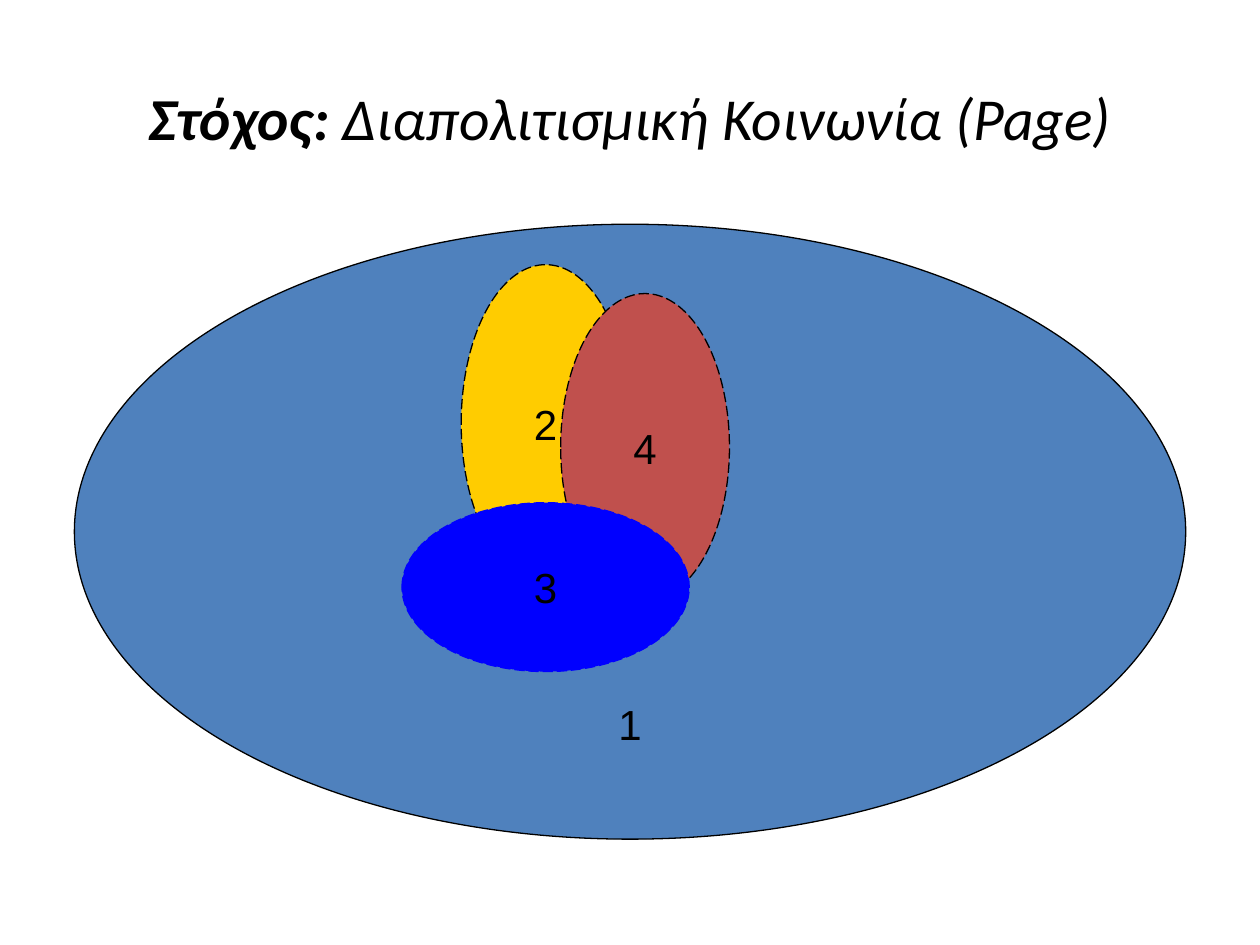
import pptx
import pptx.dml.color
import pptx.enum.dml
import pptx.enum.shapes
import pptx.enum.text
import pptx.util
from collections import namedtuple

Box = namedtuple("Box", "left top width height")
Anchor = pptx.enum.text.MSO_ANCHOR

TITLE_SHARE = (5, 4, 90, 16.67)
DIAGRAM_SHARE = (5.9, 23.73, 88.2, 65.07)
INNER_CIRCLES = [
    ("2", (34.81, 6.56, 15.19, 51.64), "FFCC00", "000000"),
    ("4", (43.76, 11.27, 15.19, 50), "C0504D", "000000"),
    ("3", (29.48, 45.29, 25.85, 27.46), "0000FF", "0000FF"),
]


def color(value):
    return pptx.dml.color.RGBColor.from_string(value)


def part(box, share):
    left, top, width, height = (value / 100 for value in share)
    return Box(
        round(box.left + left * box.width),
        round(box.top + top * box.height),
        round(width * box.width),
        round(height * box.height),
    )


def add_text(para, text, size=24, font="Arial", fill="000000", bold=False, italic=False):
    para.alignment = pptx.enum.text.PP_ALIGN.CENTER
    span = para.add_run()
    span.text = text
    span.font.size = pptx.util.Pt(size)
    span.font.name = font
    span.font.color.rgb = color(fill)
    span.font.bold = bold
    span.font.italic = italic


def add_title(page, box):
    frame = page.shapes.add_textbox(*box).text_frame
    frame.word_wrap = True
    frame.vertical_anchor = Anchor.MIDDLE
    para = frame.paragraphs[0]
    add_text(para, "Στόχος:", size=34, font="Calibri", bold=True, italic=True)
    add_text(para, " Διαπολιτισμική Κοινωνία (Page)", size=34, font="Calibri", italic=True)


def add_circle(page, box, label, fill, line, dash=None, anchor=Anchor.MIDDLE):
    circle = page.shapes.add_shape(pptx.enum.shapes.MSO_SHAPE.OVAL, *box)
    circle.shadow.inherit = False
    circle.fill.solid()
    circle.fill.fore_color.rgb = color(fill)
    circle.line.color.rgb = color(line)
    circle.line.width = pptx.util.Pt(0.75)
    if dash:
        circle.line.dash_style = dash
    frame = circle.text_frame
    frame.word_wrap = False
    frame.vertical_anchor = anchor
    frame.margin_top = frame.margin_bottom = 0
    add_text(frame.paragraphs[0], label)


def add_diagram(page, box):
    add_circle(page, box, "1", "4F81BD", "000000", anchor=Anchor.BOTTOM)
    dash = pptx.enum.dml.MSO_LINE.LONG_DASH
    for label, share, fill, line in INNER_CIRCLES:
        add_circle(page, part(box, share), label, fill, line, dash=dash)


def main():
    deck = pptx.Presentation()
    deck.slide_width = pptx.util.Inches(10)
    deck.slide_height = pptx.util.Inches(7.5)
    page = deck.slides.add_slide(deck.slide_layouts[6])
    whole = Box(0, 0, deck.slide_width, deck.slide_height)
    add_title(page, part(whole, TITLE_SHARE))
    add_diagram(page, part(whole, DIAGRAM_SHARE))
    deck.save("out.pptx")


if __name__ == "__main__":
    main()
